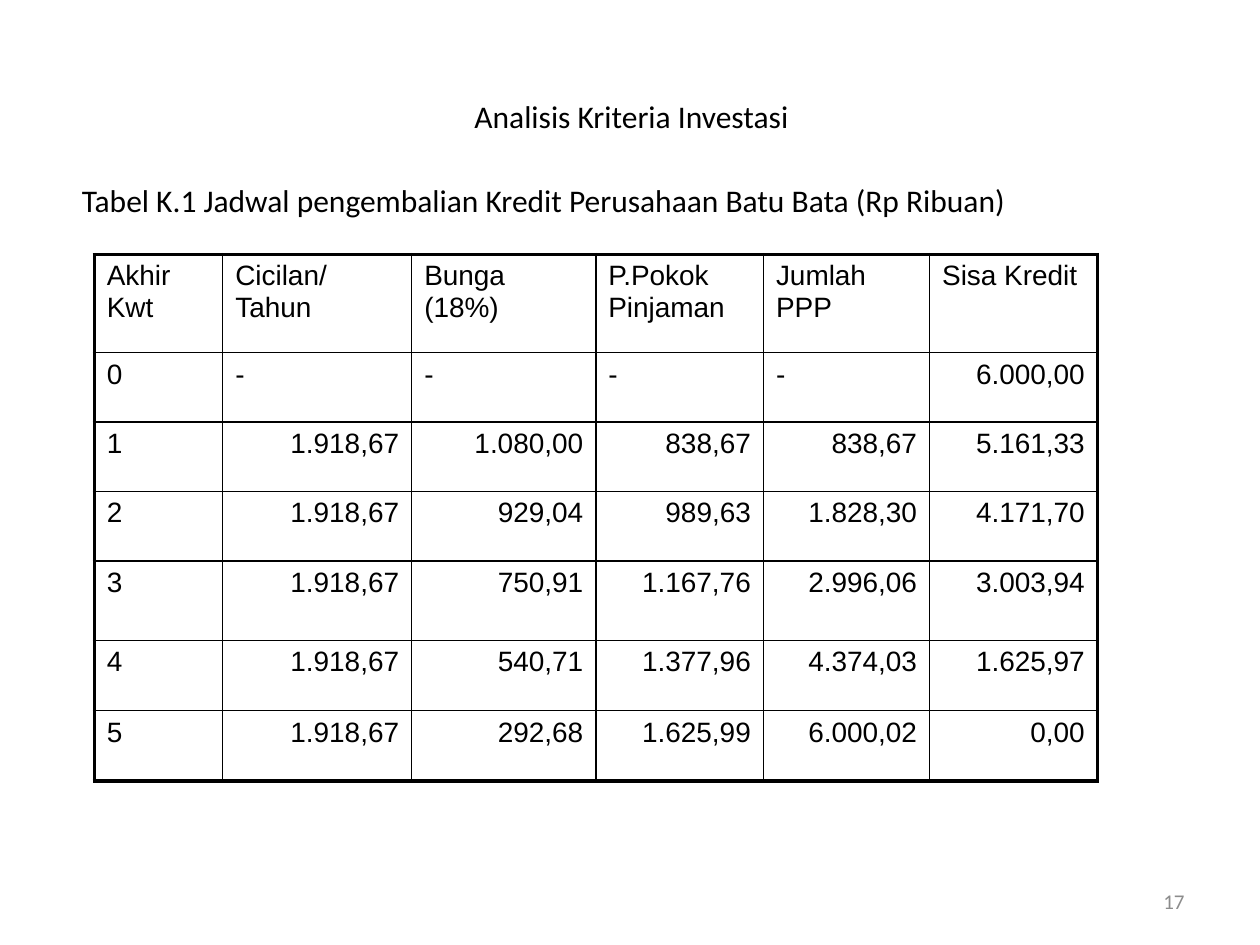
import dataclasses

import lxml.etree
import pptx
import pptx.dml.color
import pptx.enum.text
import pptx.oxml.ns
import pptx.util

Cm = pptx.util.Cm
Pt = pptx.util.Pt
Align = pptx.enum.text.PP_ALIGN
Anchor = pptx.enum.text.MSO_ANCHOR


@dataclasses.dataclass(frozen=True)
class Theme:
    ink: str = "000000"
    muted: str = "8C8C8C"
    text_font: str = "Calibri"
    table_font: str = "Arial"
    heading_size: int = 18
    table_size: int = 16
    number_size: int = 12
    outer_line: float = 2.25
    inner_line: float = 1


THEME = Theme()
TITLE_ONLY = 5
COLUMN_WIDTHS = [2.59, 3.81, 3.71, 3.38, 3.35, 3.38]
ROW_HEIGHTS = [1.98, 1.4, 1.4, 1.4, 1.6, 1.42, 1.42]
SCHEDULE = [
    ["Akhir Kwt", "Cicilan/Tahun", "Bunga (18%)", "P.Pokok Pinjaman", "Jumlah PPP", "Sisa Kredit"],
    ["0", "-", "-", "-", "-", "6.000,00"],
    ["1", "1.918,67", "1.080,00", "838,67", "838,67", "5.161,33"],
    ["2", "1.918,67", "929,04", "989,63", "1.828,30", "4.171,70"],
    ["3", "1.918,67", "750,91", "1.167,76", "2.996,06", "3.003,94"],
    ["4", "1.918,67", "540,71", "1.377,96", "4.374,03", "1.625,97"],
    ["5", "1.918,67", "292,68", "1.625,99", "6.000,02", "0,00"],
]


def write_text(text_frame, text, font, size, color, alignment):
    text_frame.text = text
    paragraph = text_frame.paragraphs[0]
    paragraph.alignment = alignment
    for run in paragraph.runs:
        run.font.name = font
        run.font.size = Pt(size)
        run.font.color.rgb = pptx.dml.color.RGBColor.from_string(color)


def place(shape, left, top, width, height):
    shape.left, shape.top = Cm(left), Cm(top)
    shape.width, shape.height = Cm(width), Cm(height)


def add_title(slide, text):
    title = slide.shapes.title
    place(title, 1.3, 0.74, 22.86, 3.18)
    title.text_frame.vertical_anchor = Anchor.MIDDLE
    write_text(title.text_frame, text, THEME.text_font, THEME.heading_size, THEME.ink, Align.CENTER)


def add_text(slide, box, text, size, color, alignment, anchor):
    shape = slide.shapes.add_textbox(*map(Cm, box))
    text_frame = shape.text_frame
    text_frame.word_wrap = True
    text_frame.vertical_anchor = anchor
    write_text(text_frame, text, THEME.text_font, size, color, alignment)
    return shape


def set_border(cell, side, width):
    properties = cell._tc.get_or_add_tcPr()
    qualify = pptx.oxml.ns.qn
    line = lxml.etree.SubElement(properties, qualify(f"a:ln{side}"), w=str(Pt(width)))
    fill = lxml.etree.SubElement(line, qualify("a:solidFill"))
    lxml.etree.SubElement(fill, qualify("a:srgbClr"), val=THEME.ink)


def add_schedule(slide, left, top):
    row_count, column_count = len(ROW_HEIGHTS), len(COLUMN_WIDTHS)
    table = slide.shapes.add_table(
        row_count, column_count, Cm(left), Cm(top),
        Cm(sum(COLUMN_WIDTHS)), Cm(sum(ROW_HEIGHTS)),
    ).table
    table.first_row = False
    table.horz_banding = False
    for column, width in zip(table.columns, COLUMN_WIDTHS):
        column.width = Cm(width)
    for row, height in zip(table.rows, ROW_HEIGHTS):
        row.height = Cm(height)
    for row_index, values in enumerate(SCHEDULE):
        for column_index, value in enumerate(values):
            cell = table.cell(row_index, column_index)
            alignment = Align.RIGHT if "," in value else Align.LEFT
            write_text(cell.text_frame, value, THEME.table_font, THEME.table_size, THEME.ink, alignment)
            outer_sides = {
                "L": column_index == 0,
                "R": column_index == column_count - 1,
                "T": row_index == 0,
                "B": row_index == row_count - 1,
            }
            for side, is_outer in outer_sides.items():
                set_border(cell, side, THEME.outer_line if is_outer else THEME.inner_line)
            cell.fill.background()


def main():
    presentation = pptx.Presentation()
    presentation.slide_width = Cm(25.4)
    presentation.slide_height = Cm(19.05)
    slide = presentation.slides.add_slide(presentation.slide_layouts[TITLE_ONLY])
    add_text(slide, (18.2, 17.66, 5.93, 1.01), "17",
             THEME.number_size, THEME.muted, Align.RIGHT, Anchor.MIDDLE)
    add_title(slide, "Analisis Kriteria Investasi")
    caption = add_text(slide, (1.27, 3.53, 23.04, 13.49),
                       "Tabel K.1 Jadwal pengembalian Kredit Perusahaan Batu Bata (Rp Ribuan)",
                       THEME.heading_size, THEME.ink, Align.LEFT, Anchor.TOP)
    caption.text_frame.margin_left = Cm(0.38)
    add_schedule(slide, 1.9, 5.13)
    presentation.save("out.pptx")


if __name__ == "__main__":
    main()
